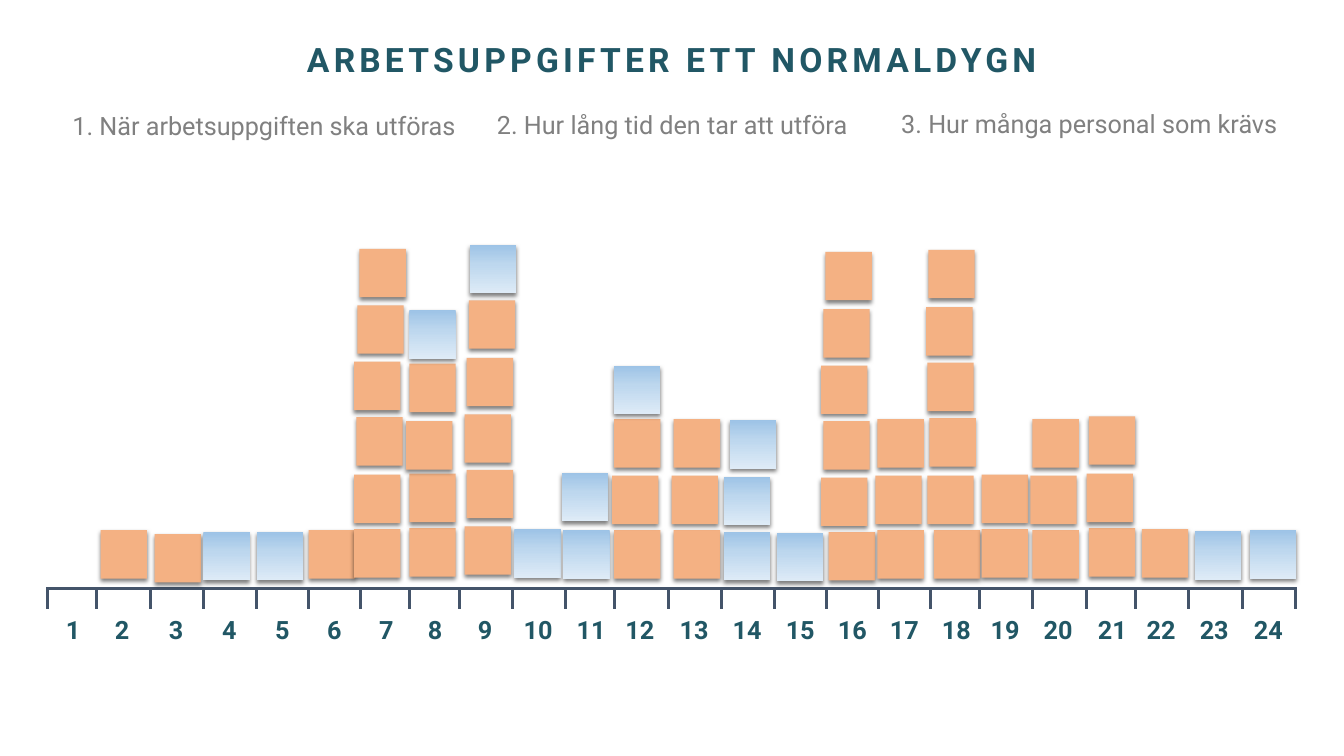
"""Build a slide that stacks the tasks of a normal day by hour."""
import copy
import dataclasses
import typing

import lxml.etree
import pptx
import pptx.dml.color
import pptx.enum.shapes
import pptx.enum.text
import pptx.oxml.ns
import pptx.shapes.autoshape
import pptx.util

qn = pptx.oxml.ns.qn
Shape = pptx.shapes.autoshape.Shape


@dataclasses.dataclass(frozen=True)
class Theme:
    font: str = "Roboto"
    title: str = "215765"
    grey: str = "808080"
    white: str = "FFFFFF"
    axis: str = "44546A"
    task: str = "F4B183"
    fade: tuple[tuple[float, str], ...] = ((0, "9DC3E6"), (0.41, "BDD7EE"), (1, "DEEBF7"))
    big: int = 24
    small: int = 18
    line: float = 2.25


class Box(typing.NamedTuple):
    left: float
    top: float
    width: float
    height: float


class Stack(typing.NamedTuple):
    hour: int
    kinds: str
    across: tuple[int, ...]
    down: tuple[int, ...]


class Note(typing.NamedTuple):
    text: str
    box: Box


LOOK = Theme()
WIDE, HIGH = 13.33, 7.5
LEFT, AXIS, TICK = 3.53, 77.87, 2.67
COLUMN, ROW, FLOOR = 3.87, 7.47, 70.13
STEP_X, STEP_Y = 0.08, 0.13

EDGES = (0, -3, -1, 0, 1, 1, 1, -2, -4, -3, -2, -5, -3,
         -2, -1, -1, -1, -1, -4, -3, -1, -4, -3, -1, 0)

STACKS = (
    Stack(2, "O", (4,), (0,)),
    Stack(3, "O", (4,), (4,)),
    Stack(4, "B", (0,), (2,)),
    Stack(5, "B", (0,), (2,)),
    Stack(6, "O", (0,), (0,)),
    Stack(7, "OOOOOO", (-6, -6, -4, -6, -3, -1), (-1, 1, 0, 1, 1, 1)),
    Stack(8, "OOOOB", (0, 0, -3, 0, 0), (-2, 0, 4, 3, 6)),
    Stack(9, "OOOOOB", (5, 7, 5, 7, 9, 10), (-4, -4, -3, -3, -4, -3)),
    Stack(10, "B", (2,), (-1,)),
    Stack(11, "BB", (-2, -3), (0, -1)),
    Stack(12, "OOOB", (0, -2, 0, 0), (0, 2, 2, 5)),
    Stack(13, "OOO", (5, 3, 5), (0, 2, 2)),
    Stack(14, "BBB", (2, 2, 8), (2, 3, 3)),
    Stack(15, "B", (2,), (3,)),
    Stack(16, "OOOOOO", (2, -5, -3, -5, -3, -1), (2, 4, 4, 5, 5, 4)),
    Stack(17, "OOO", (-1, -3, -1), (0, 2, 2)),
    Stack(18, "OOOOOO", (3, -3, -1, -3, -4, -2), (0, 2, 1, 2, 3, 2)),
    Stack(19, "OO", (2, 2), (-1, 1)),
    Stack(20, "OOO", (0, -2, 0), (0, 2, 2)),
    Stack(21, "OOO", (2, 0, 2), (-2, 0, -1)),
    Stack(22, "O", (6,), (-1,)),
    Stack(23, "B", (6,), (1,)),
    Stack(24, "B", (7,), (0,)),
)

NOTES = (
    Note("1. När arbetsuppgiften ska utföras", Box(4.65, 13.87, 48.99, 5.87)),
    Note("2. Hur lång tid den tar att utföra", Box(36.23, 13.73, 44.79, 5.87)),
    Note("3. Hur många personal som krävs", Box(66.32, 13.6, 31.13, 5.87)),
)


def tint(code: str) -> pptx.dml.color.RGBColor:
    return pptx.dml.color.RGBColor.from_string(code)


def scale(box: Box) -> list[int]:
    sides = (WIDE, HIGH, WIDE, HIGH)
    return [pptx.util.Inches(part * side / 100) for part, side in zip(box, sides)]


def edge(index: int) -> float:
    return LEFT + index * COLUMN + EDGES[index] * STEP_X


def add_rect(slide, box: Box, fill: str) -> Shape:
    rect = slide.shapes.add_shape(pptx.enum.shapes.MSO_SHAPE.RECTANGLE, *scale(box))
    rect.shadow.inherit = False
    rect.fill.solid()
    rect.fill.fore_color.rgb = tint(fill)
    rect.line.fill.background()
    return rect


def write(shape: Shape, text: str, size: int, color: str, bold: bool, center: bool) -> None:
    frame = shape.text_frame
    frame.text = text
    frame.word_wrap = True
    line = frame.paragraphs[0]
    align = pptx.enum.text.PP_ALIGN
    line.alignment = align.CENTER if center else align.LEFT
    font = line.runs[0].font
    font.name, font.size, font.bold = LOOK.font, pptx.util.Pt(size), bold
    font.color.rgb = tint(color)


def add_head(slide, note: Note, size: int, color: str, main: bool) -> Shape:
    rect = add_rect(slide, note.box, LOOK.white)
    write(rect, note.text, size, color, main, main)
    rect.text_frame.vertical_anchor = pptx.enum.text.MSO_ANCHOR.MIDDLE
    rect.text_frame.paragraphs[0].line_spacing = 0.9
    return rect


def add_line(slide, left: float, top: float, right: float, low: float) -> None:
    ends = scale(Box(left, top, right, low))
    line = slide.shapes.add_connector(pptx.enum.shapes.MSO_CONNECTOR.STRAIGHT, *ends)
    line.line.color.rgb = tint(LOOK.axis)
    line.line.width = pptx.util.Pt(LOOK.line)
    lxml.etree.SubElement(line._element.spPr, qn("a:effectLst"))


def add_label(slide, hour: int) -> None:
    box = Box(edge(hour - 1), AXIS + TICK, 3.83, 5.33)
    label = slide.shapes.add_textbox(*scale(box))
    write(label, str(hour), LOOK.small, LOOK.title, True, True)
    label.text_frame.auto_size = pptx.enum.text.MSO_AUTO_SIZE.SHAPE_TO_FIT_TEXT


def add_fade(tile: Shape) -> None:
    tile.fill.gradient()
    tile.fill.gradient_angle = 270
    stops = tile._element.spPr.find(".//" + qn("a:gsLst"))
    stops.insert(1, copy.deepcopy(stops[0]))
    for stop, (place, color) in zip(tile.fill.gradient_stops, LOOK.fade):
        stop.position = place
        stop.color.rgb = tint(color)


def add_shade(tile: Shape) -> None:
    effect = tile._element.spPr.find(qn("a:effectLst"))
    shade = lxml.etree.SubElement(
        effect, qn("a:outerShdw"), blurRad=str(pptx.util.Pt(3)),
        dist=str(pptx.util.Pt(2)), dir="5400000", algn="ctr", rotWithShape="0")
    color = lxml.etree.SubElement(shade, qn("a:srgbClr"), val="000000")
    lxml.etree.SubElement(color, qn("a:alpha"), val="49000")


def add_stack(slide, stack: Stack) -> None:
    tiles = zip(stack.kinds, stack.across, stack.down)
    for row, (kind, across, down) in enumerate(tiles):
        left = edge(stack.hour - 1) + across * STEP_X
        top = FLOOR - row * ROW + down * STEP_Y
        tile = add_rect(slide, Box(left, top, 3.45, 6.4), LOOK.task)
        if kind == "B":
            add_fade(tile)
        add_shade(tile)


def main() -> None:
    deck = pptx.Presentation()
    deck.slide_width = pptx.util.Inches(WIDE)
    deck.slide_height = pptx.util.Inches(HIGH)
    slide = deck.slides.add_slide(deck.slide_layouts[6])
    title = Note("ARBETSUPPGIFTER ETT NORMALDYGN", Box(0, 3.07, 100, 10.27))
    head = add_head(slide, title, LOOK.big, LOOK.title, True)
    head.text_frame.paragraphs[0].runs[0].font._element.set("spc", "300")
    add_line(slide, edge(0) - 0.1, AXIS, edge(24) + 0.1, AXIS)
    for index in range(len(EDGES)):
        add_line(slide, edge(index), AXIS, edge(index), AXIS + TICK)
    for hour in range(1, len(EDGES)):
        add_label(slide, hour)
    for stack in STACKS:
        add_stack(slide, stack)
    for note in NOTES:
        add_head(slide, note, LOOK.small, LOOK.grey, False)
    deck.save("out.pptx")


if __name__ == "__main__":
    main()
